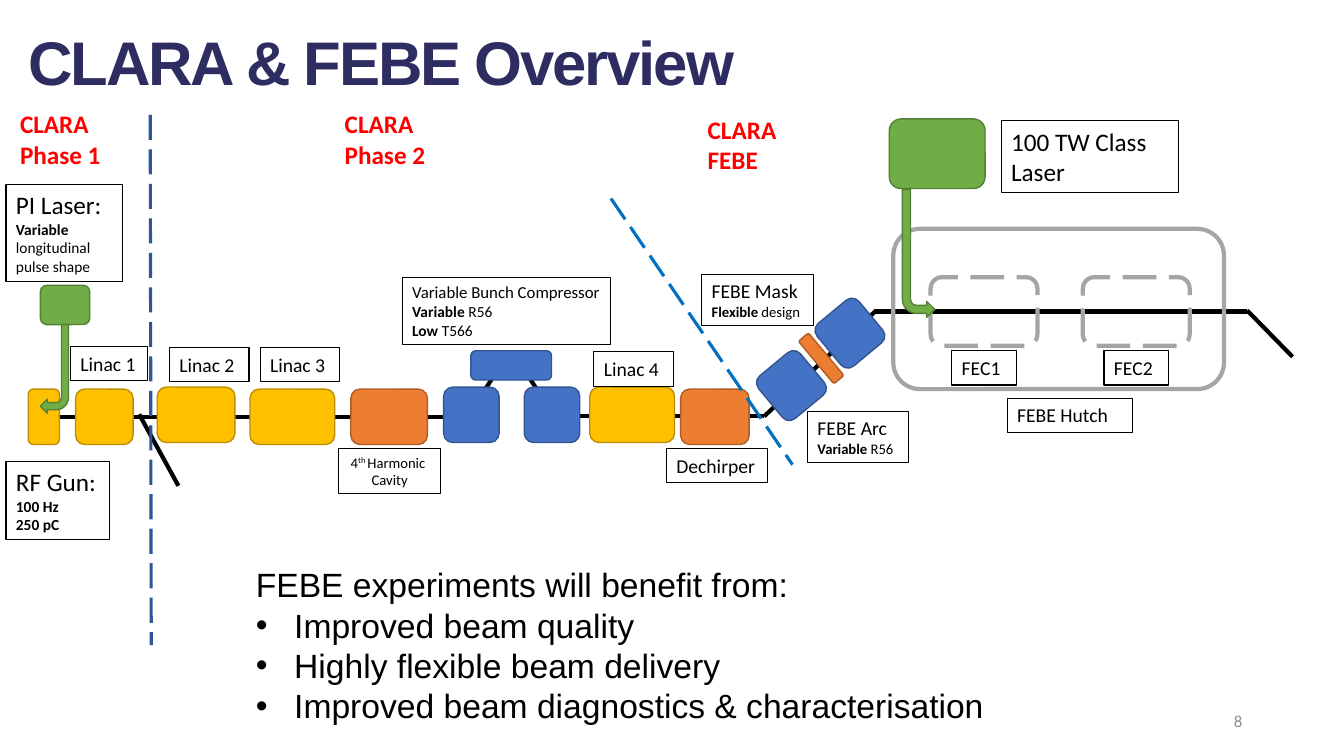
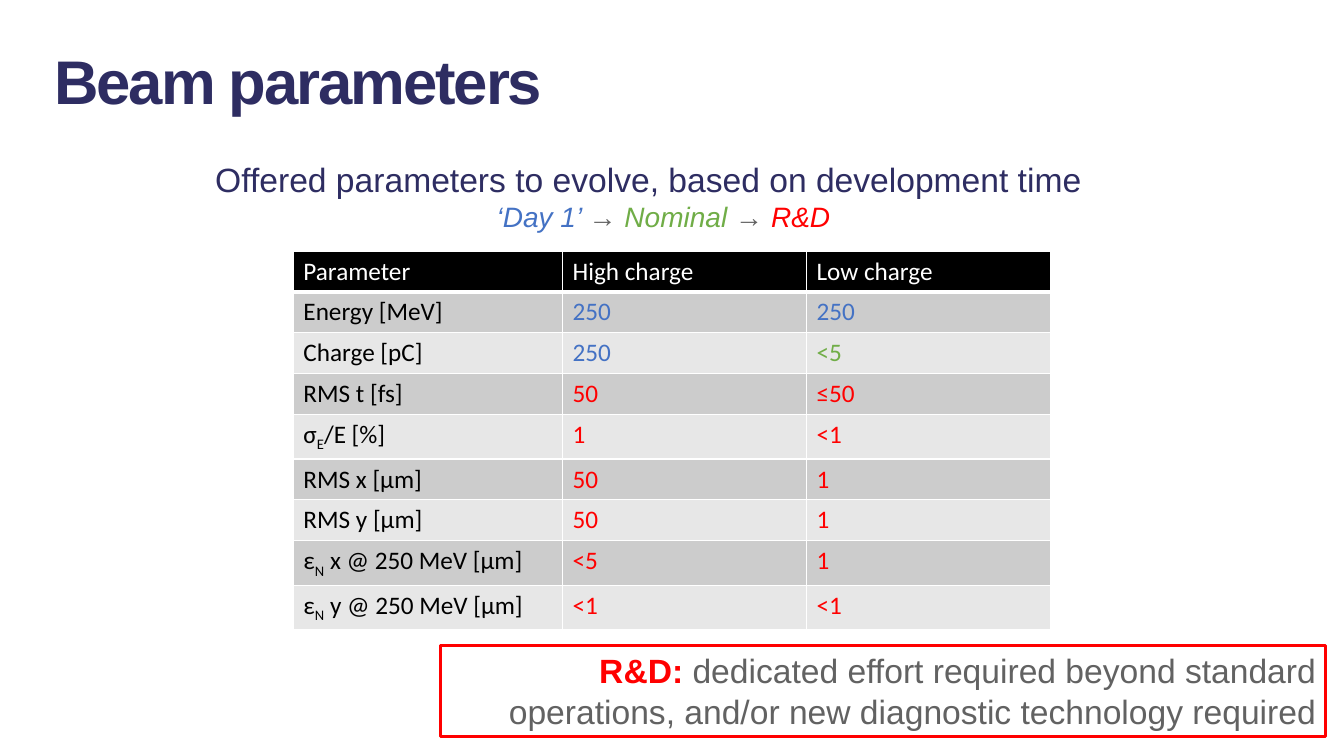
import dataclasses

import lxml.etree
import pptx
import pptx.dml.color
import pptx.enum.dml
import pptx.enum.shapes
import pptx.enum.text
import pptx.oxml.ns
import pptx.util

SCALE = 9144  # EMU in one px, 100 px to the inch
qn = pptx.oxml.ns.qn
ALIGN = pptx.enum.text.PP_ALIGN
SHAPE = pptx.enum.shapes.MSO_SHAPE


@dataclasses.dataclass(frozen=True)
class Theme:
    head: str = "Arial"
    body: str = "Calibri"
    black: str = "000000"
    white: str = "FFFFFF"
    navy: str = "2E2D62"
    red: str = "FF0000"
    gray: str = "626262"
    pale: str = "8C8C8C"
    frame: str = "A5A5A5"
    sky: str = "0070C0"
    steel: str = "2F5597"
    # Fill and edge of each kind of block
    gold: tuple = ("FFC000", "BD8E00")
    rust: tuple = ("ED7D31", "AF5C24")
    blue: tuple = ("4472C4", "325491")
    green: tuple = ("70AD47", "538035")
    bands: tuple = ("CCCCCC", "E7E7E7")
    # Type sizes
    title: int = 44
    lead: int = 24
    sub: int = 20
    large: int = 18
    label: int = 14
    small: int = 12
    fine: int = 11
    tiny: float = 10.5


T = Theme()


def px(n):
    return pptx.util.Emu(round(n * SCALE))


def rgb(code):
    return pptx.dml.color.RGBColor.from_string(code)


def place(box, x, y, w, h):
    """Turn a place inside a box into a place on the slide."""
    return box[0] + x, box[1] + y, w, h


# Text: a paragraph is a string or a list of runs, a run a string or (string, format)
def write(frame, paras, font=T.body, size=T.label, color=T.black, bold=False,
          italic=False, align=ALIGN.LEFT, base=0, track=0, left=0, hang=0, mark=None):
    for i, item in enumerate(paras):
        para = frame.paragraphs[0] if i == 0 else frame.add_paragraph()
        para.alignment = align
        props = para._p.get_or_add_pPr()
        props.set("marL", str(px(left)))
        props.set("indent", str(px(-hang)))
        if mark:
            lxml.etree.SubElement(props, qn("a:buFont")).set("typeface", T.head)
            lxml.etree.SubElement(props, qn("a:buChar")).set("char", mark)
        for part in [item] if isinstance(item, str) else item:
            words, own = (part, {}) if isinstance(part, str) else part
            look = dict(font=font, size=size, color=color, bold=bold,
                        italic=italic, base=base) | own
            run = para.add_run()
            run.text = words
            run.font.name = look["font"]
            run.font.size = pptx.util.Pt(look["size"])
            run.font.bold = look["bold"]
            run.font.italic = look["italic"]
            run.font.color.rgb = rgb(look["color"])
            if look["base"]:
                run.font._element.set("baseline", str(look["base"] * 1000))
            if track:
                run.font._element.set("spc", str(round(track * 100)))


def note(slide, box, paras, edge=None, width=0.75, **look):
    shape = slide.shapes.add_textbox(*map(px, box))
    shape.text_frame.word_wrap = True
    if edge:
        stroke(shape, edge, width)
    write(shape.text_frame, paras, **look)
    return shape


def tag(slide, box, paras, **look):
    return note(slide, box, paras, edge=T.black, **look)


def stroke(shape, color, width, dash=False):
    shape.line.color.rgb = rgb(color)
    shape.line.width = pptx.util.Pt(width)
    if dash:
        shape.line.dash_style = pptx.enum.dml.MSO_LINE.LONG_DASH


def line(slide, box, x1, y1, x2, y2, color=T.black, width=3, dash=False):
    x, y = box[:2]
    rule = slide.shapes.add_connector(
        pptx.enum.shapes.MSO_CONNECTOR.STRAIGHT,
        *map(px, (x + x1, y + y1, x + x2, y + y2)))
    stroke(rule, color, width, dash)
    lxml.etree.SubElement(rule._element.spPr, qn("a:effectLst"))


def block(slide, box, paint, kind=SHAPE.ROUNDED_RECTANGLE, turn=0, flip=""):
    shape = slide.shapes.add_shape(kind, *map(px, box))
    shape.shadow.inherit = False
    shape.fill.solid()
    shape.fill.fore_color.rgb = rgb(paint[0])
    stroke(shape, paint[1], 1)
    shape.rotation = turn
    for axis in flip:
        shape._element.spPr.find(qn("a:xfrm")).set("flip" + axis, "1")


def outline(slide, box, dash=False):
    shape = slide.shapes.add_shape(SHAPE.ROUNDED_RECTANGLE, *map(px, box))
    shape.shadow.inherit = False
    shape.fill.background()
    stroke(shape, T.frame, 3, dash)


def title(slide, box, words):
    note(slide, box, [words], font=T.head, size=T.title, color=T.navy,
         bold=True, track=-1.5)


def pair(name, strong, rest, size):
    """Paragraphs of a label: a name, then a detail that opens in bold."""
    return [name, [(strong, {"bold": True, "size": size}), (rest, {"size": size})]]


# Beam line: axis, machine blocks and their labels
def beam(slide, box):
    for ends in ((0, 144, 439, 144), (436, 143, 463, 101), (521, 142, 494, 100),
                 (519, 143, 730, 143), (730, 143, 840, 39), (839, 39, 1209, 39),
                 (1209, 38, 1254, 84), (110, 141, 149, 212)):
        line(slide, box, *ends)
    tall = 55
    for x, y, w, paint in ((0, 116, 31, T.gold), (47, 116, 57, T.gold),
                           (128, 114, 77, T.gold), (220, 116, 84, T.gold),
                           (320, 116, 76, T.rust), (412, 114, 55, T.blue),
                           (492, 114, 55, T.blue), (557, 114, 84, T.gold),
                           (647, 116, 68, T.rust)):
        block(slide, place(box, x, y, w, tall), paint)
    block(slide, place(box, 439, 78, 80, 29), T.blue)
    for x, y, w, paint in ((730, 85, 54, T.blue), (780, 58, 13, T.rust),
                           (788, 33, 54, T.blue)):
        block(slide, place(box, x, y, w, tall), paint, turn=320.3)

    for x, y, w, name in ((42, 74, 76, "Linac 1"), (140, 75, 79, "Linac 2"),
                          (230, 75, 79, "Linac 3"), (561, 79, 79, "Linac 4"),
                          (633, 175, 100, "Dechirper")):
        tag(slide, place(box, x, y, w, 34), [name])
    fine = {"size": T.fine}
    bold = fine | {"bold": True}
    tag(slide, place(box, 371, 5, 207, 67),
        ["Variable Bunch Compressor", [("Variable", bold), (" R56", fine)],
         [("Low", bold), (" T566", fine)]], size=T.small)
    tag(slide, place(box, 308, 175, 101, 45),
        [["4", ("th ", {"base": 30}), "Harmonic "], "Cavity"],
        size=T.tiny, align=ALIGN.CENTER)
    tag(slide, place(box, 773, 138, 100, 51),
        pair("FEBE Arc", "Variable", " R56", T.tiny))
    tag(slide, place(box, 668, 2, 111, 51),
        pair("FEBE Mask", "Flexible", " design", T.tiny))


# Electron source: laser above, gun below
def source(slide, box):
    tag(slide, place(box, 0, 0, 116, 96),
        pair("PI Laser:", "Variable", " longitudinal pulse shape", T.fine), size=T.large)
    block(slide, place(box, 34, 100, 49, 39), T.green)
    block(slide, place(box, 34, 139, 28, 88), T.green, SHAPE.BENT_ARROW, flip="HV")
    bold = {"size": T.fine, "bold": True}
    tag(slide, place(box, 0, 275, 103, 77),
        ["RF Gun:", [("100 Hz", bold)], [("250 pC", bold)]], size=T.large)


# Hutch: two chambers fed by the big laser
def hutch(slide, box):
    outline(slide, place(box, 4, 109, 328, 159))
    for i, name in enumerate(("FEC1", "FEC2")):
        step = 151 * i
        outline(slide, place(box, 41 + step, 157, 106, 68), dash=True)
        tag(slide, place(box, 62 + step, 230, 64, 34), [name])
    block(slide, place(box, 13, 70, 32, 127), T.green, SHAPE.BENT_ARROW, flip="V")
    block(slide, place(box, 0, 0, 95, 69), T.green)
    tag(slide, place(box, 117, 277, 124, 34), ["FEBE Hutch"])
    tag(slide, place(box, 111, 2, 176, 71), ["100 TW Class Laser"], size=T.large)


# Phases: names and the dashed borders between them
def phases(slide, box):
    for x, y, name in ((0, 0, "Phase 1"), (322, 0, "Phase 2"), (682, 5, "FEBE")):
        note(slide, place(box, x, y, 118, 71), ["CLARA", name],
             size=T.large, color=T.red, bold=True)
    line(slide, box, 596, 94, 776, 358, T.sky, 2.25, dash=True)
    line(slide, box, 139, 11, 140, 537, T.steel, 2.25, dash=True)


def gains(slide, box):
    look = dict(font=T.head, size=T.lead)
    frame = note(slide, box, ["FEBE experiments will benefit from:"], **look).text_frame
    bullets(frame, ["Improved beam quality", "Highly flexible beam delivery",
                    "Improved beam diagnostics & characterisation"], **look)


def bullets(frame, items, **look):
    """Add a bulleted list below the text a frame already holds."""
    for item in items:
        write(Tail(frame), [item], left=38, hang=38, mark="•", **look)


class Tail:
    """A frame seen from a new last paragraph."""

    def __init__(self, frame):
        self.paragraphs = [frame.add_paragraph()]


def number(slide, box, words):
    shape = note(slide, box, [words], size=T.small, color=T.pale, align=ALIGN.RIGHT)
    shape.text_frame.vertical_anchor = pptx.enum.text.MSO_ANCHOR.MIDDLE


def stages(slide, box):
    look = dict(font=T.head, align=ALIGN.CENTER)
    frame = note(slide, box, ["Offered parameters to evolve, based on development time"],
                 size=T.lead, color=T.navy, left=20, **look).text_frame
    write(Tail(frame), [[("‘Day 1’ ", {"color": T.blue[0]}), "→ ",
                         ("Nominal ", {"color": T.green[0]}), "→ ",
                         ("R&D", {"color": T.red})]],
          size=T.sub, color=T.gray, italic=True, left=50, **look)


# Table of parameters, each value in the colour of its stage
def border(cell, foot):
    props = cell._tc.get_or_add_tcPr()
    for side, width in (("L", 1), ("R", 1), ("T", 1), ("B", foot)):
        edge = lxml.etree.SubElement(props, qn("a:ln" + side), w=str(pptx.util.Pt(width)))
        fill = lxml.etree.SubElement(edge, qn("a:solidFill"))
        lxml.etree.SubElement(fill, qn("a:srgbClr"), val=T.white)


def values(slide, box):
    day, nominal, study = T.blue[0], T.green[0], T.red
    sub = {"base": -25}
    rows = [
        ("Parameter", ("High charge", T.white), ("Low charge", T.white)),
        ("Energy [MeV]", ("250", day), ("250", day)),
        ("Charge [pC]", ("250", day), ("<5", nominal)),
        ("RMS t [fs]", ("50", study), ("≤50", study)),
        (["σ", ("E", sub), "/E [%]"], ("1", study), ("<1", study)),
        ("RMS x [µm]", ("50", study), ("1", study)),
        ("RMS y [µm]", ("50", study), ("1", study)),
        (["ε", ("N", sub), " x @ 250 MeV [µm]"], ("<5", study), ("1", study)),
        (["ε", ("N", sub), " y @ 250 MeV [µm]"], ("<1", study), ("<1", study)),
    ]
    grid = slide.shapes.add_table(len(rows), 3, *map(px, box)).table
    for col, wide in zip(grid.columns, (267, 242, 242)):
        col.width = px(wide)
    for i, (name, *pairs) in enumerate(rows):
        grid.rows[i].height = px(box[3] / len(rows))
        first = (name, T.black if i else T.white)
        for j, (words, color) in enumerate([first, *pairs]):
            cell = grid.cell(i, j)
            border(cell, 1 if i else 3)
            cell.fill.solid()
            cell.fill.fore_color.rgb = rgb(T.bands[(i - 1) % 2] if i else T.black)
            write(cell.text_frame, [words], size=T.large, color=color)


def remark(slide, box):
    note(slide, box,
         [[("R&D: ", {"color": T.red, "bold": True}),
           "dedicated effort required beyond standard operations, "
           "and/or new diagnostic technology required"]],
         edge=T.red, width=2.25, font=T.head, size=T.lead, color=T.gray,
         align=ALIGN.RIGHT, left=50)


def overview(slide):
    title(slide, (18, 19, 843, 84), "CLARA & FEBE Overview")
    beam(slide, (28, 270, 1254, 220))
    source(slide, (6, 183, 116, 352))
    hutch(slide, (882, 118, 332, 311))
    phases(slide, (10, 103, 800, 537))
    gains(slide, (244, 555, 926, 190))
    number(slide, (942, 695, 300, 40), "8")


def params(slide):
    title(slide, (44, 38, 1278, 84), "Beam parameters")
    stages(slide, (47, 153, 1172, 84))
    values(slide, (291, 249, 751, 365))
    remark(slide, (437, 640, 878, 91))


def main():
    deck = pptx.Presentation()
    deck.slide_width, deck.slide_height = px(1333), px(750)
    for build in (overview, params):
        build(deck.slides.add_slide(deck.slide_layouts[6]))
    deck.save("out.pptx")


if __name__ == "__main__":
    main()
